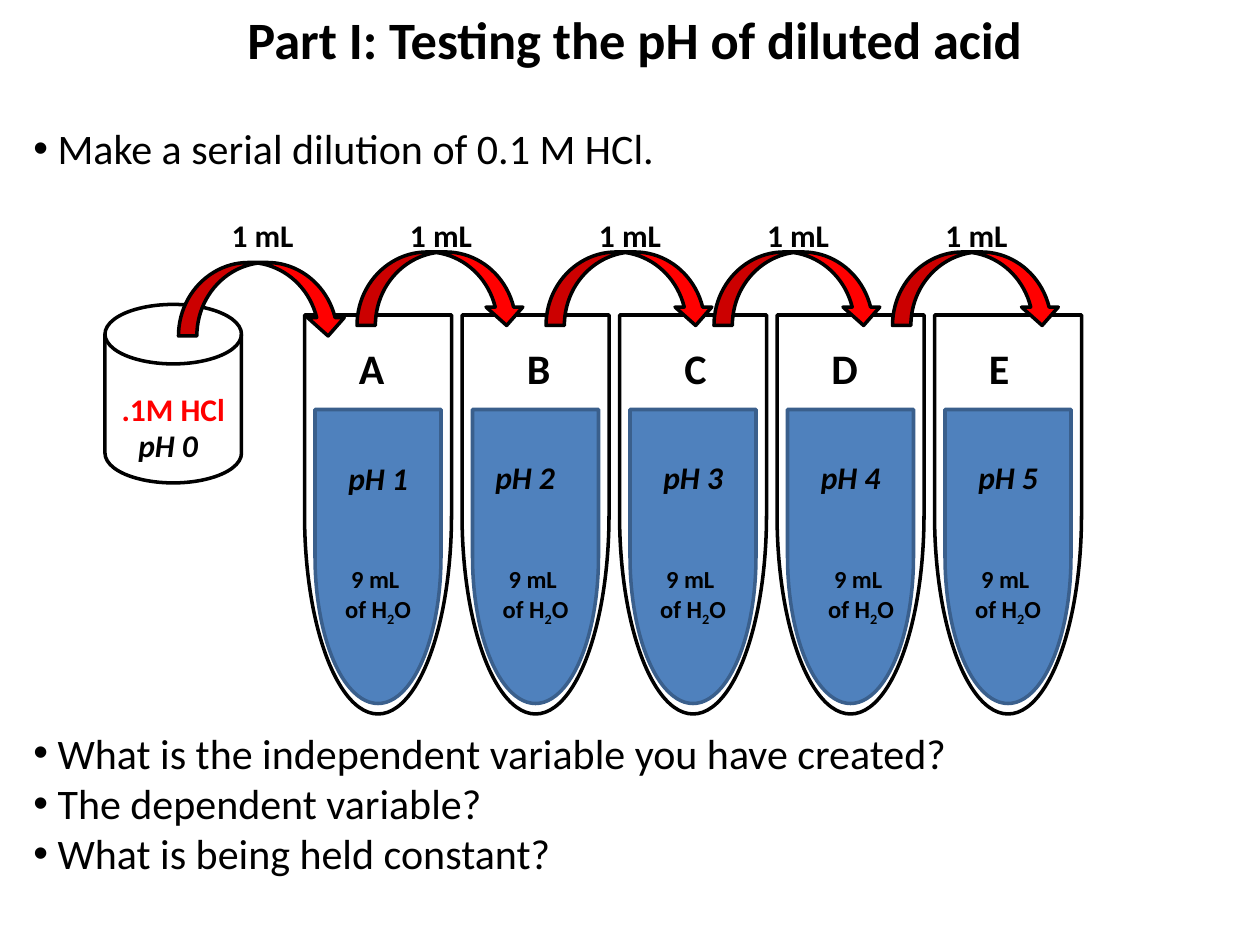
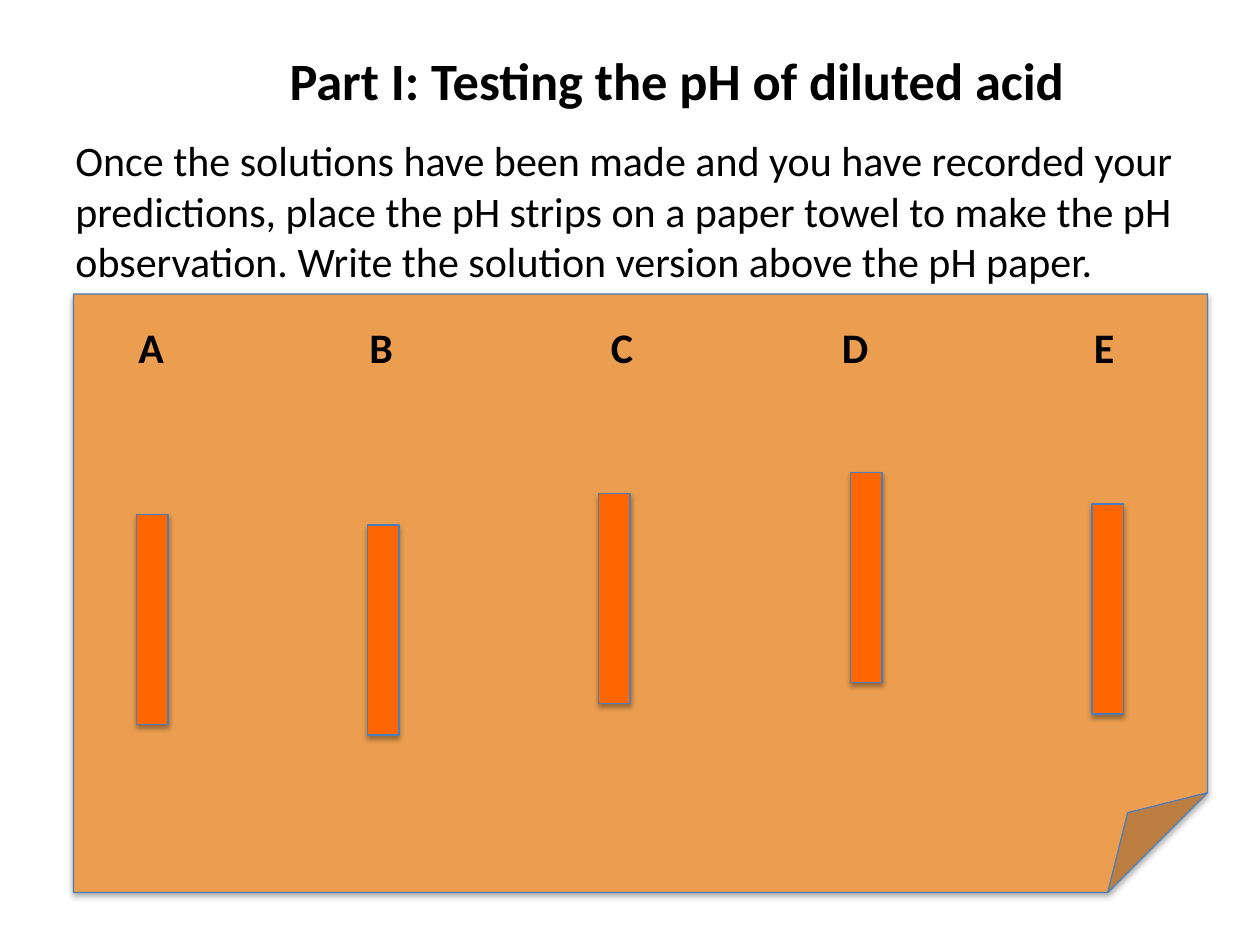
import pptx
import pptx.dml.color
import pptx.enum.shapes
import pptx.enum.text
import pptx.oxml
import pptx.oxml.ns
import pptx.util

Pt = pptx.util.Pt
MSO = pptx.enum.shapes.MSO_SHAPE
ALIGN = pptx.enum.text.PP_ALIGN
ANCHOR = pptx.enum.text.MSO_ANCHOR
AUTO = pptx.enum.text.MSO_AUTO_SIZE

COLORS = {
    "black": "000000", "white": "FFFFFF", "red": "FF0000",
    "water": "4F81BD", "water_edge": "3A5F8C", "paper": "EB9E50",
    "strip": "FF6600", "edge": "4B7EBC",
}
FONT = "Calibri"
TITLE = "Part I: Testing the pH of diluted acid"
LETTERS = "ABCDE"
NS = pptx.oxml.ns.nsdecls("a")


def rgb(name):
    return pptx.dml.color.RGBColor.from_string(COLORS[name])


def write(p, text, size=18, color="black", bold=True, italic=False,
          align=ALIGN.LEFT, baseline=0):
    p.alignment = align
    r = p.add_run()
    r.text = text
    r.font.name = FONT
    r.font.size = Pt(size)
    r.font.bold = bold
    r.font.italic = italic
    r.font.color.rgb = rgb(color)
    if baseline:
        r.font._element.set("baseline", str(baseline * 1000))


class Deck:
    def __init__(self):
        self.prs = pptx.Presentation()
        self.prs.slide_width = Pt(720)
        self.prs.slide_height = Pt(540)
        self.s = None

    def slide(self, title, x, y):
        self.s = self.prs.slides.add_slide(self.prs.slide_layouts[5])
        sp = self.s.shapes.title
        sp.left, sp.top, sp.width, sp.height = Pt(x), Pt(y), Pt(702), Pt(44)
        tf = sp.text_frame
        tf.auto_size = AUTO.NONE
        tf.vertical_anchor = ANCHOR.TOP
        write(tf.paragraphs[0], title, size=30, align=ALIGN.CENTER)

    def text(self, lines, x, y, w, h, bullet=False, **fmt):
        tf = self.s.shapes.add_textbox(Pt(x), Pt(y), Pt(w), Pt(h)).text_frame
        tf.word_wrap = True
        tf.auto_size = AUTO.SHAPE_TO_FIT_TEXT
        for i, line in enumerate(lines):
            p = tf.add_paragraph() if i else tf.paragraphs[0]
            write(p, line, **fmt)
            if bullet:
                self.bullet(p)
        return tf

    def bullet(self, p):
        pPr = p._p.get_or_add_pPr()
        pPr.set("marL", str(Pt(13.8)))
        pPr.set("indent", str(-Pt(13.8)))
        for tag in ('buFont typeface="Arial"', 'buChar char="•"'):
            pPr.append(pptx.oxml.parse_xml(f"<a:{tag} {NS}/>"))

    def shape(self, kind, x, y, w, h, fill, line, weight, rotation=0, shadow=False):
        sp = self.s.shapes.add_shape(kind, Pt(x), Pt(y), Pt(w), Pt(h))
        sp.rotation = rotation
        sp.fill.solid()
        sp.fill.fore_color.rgb = rgb(fill)
        sp.line.color.rgb = rgb(line)
        sp.line.width = Pt(weight)
        sp.shadow.inherit = False
        if shadow:
            effects = sp._element.spPr.find(pptx.oxml.ns.qn("a:effectLst"))
            effects.append(pptx.oxml.parse_xml(
                f'<a:outerShdw {NS} blurRad="{Pt(3.1)}" dist="{Pt(1.8)}" dir="5400000"'
                ' rotWithShape="0"><a:srgbClr val="000000"><a:alpha val="35000"/>'
                '</a:srgbClr></a:outerShdw>'))
        return sp

    def upright_delay(self, cx, cy, w, h, fill, line):
        self.shape(MSO.FLOWCHART_DELAY, cx - h / 2, cy - w / 2, h, w, fill, line, 2,
                   rotation=90)


def dilution_slide(deck):
    deck.slide(TITLE, 12, 0.5)
    body = dict(size=24, bold=False, bullet=True)
    deck.text(["Make a serial dilution of 0.1 M HCl."], 12, 66.5, 702, 36, **body)
    deck.text(["What is the independent variable you have created?",
               "The dependent variable?",
               "What is being held constant?"], 12, 412, 702, 95, **body)

    for i in range(len(LETTERS)):
        cx = 216 + 90 * i
        deck.upright_delay(cx, 294, 84, 228, "white", "black")
        deck.upright_delay(cx, 318, 72, 168, "water", "water_edge")

    for x in (186, 276, 366, 462, 546):
        water = dict(size=14, align=ALIGN.CENTER)
        tf = deck.text(["9 mL ", "of H"], x, 319, 60, 41, **water)
        write(tf.paragraphs[1], "2", baseline=-25, **water)
        write(tf.paragraphs[1], "O", **water)

    beaker = deck.shape(MSO.FLOWCHART_MAGNETIC_DISK, 60, 174, 78, 102,
                        "white", "black", 2)
    beaker.text_frame.vertical_anchor = ANCHOR.MIDDLE
    write(beaker.text_frame.paragraphs[0], ".1M HCl", color="red", align=ALIGN.CENTER)

    arrows = ((102, 150), (204, 144), (312, 144), (408, 144), (510, 144))
    for x, y in arrows:
        deck.shape(MSO.CURVED_DOWN_ARROW, x, y, 96, 42, "red", "black", 2)
    for x, _ in arrows:
        deck.text(["1 mL"], x + 6, 120, 84, 29, align=ALIGN.CENTER)

    ph_spots = ((72, 240), (192, 259), (276, 258), (372, 258), (462, 258), (552, 258))
    for ph, (x, y) in enumerate(ph_spots):
        deck.text([f"pH {ph}"], x, y, 72, 29, italic=True)
    for letter, x in zip(LETTERS, (198, 294, 384, 468, 558)):
        deck.text([letter], x, 192, 48, 36, size=24)


def strips_slide(deck):
    deck.slide(TITLE, 36, 24)
    deck.text(["Once the solutions have been made and you have recorded your "
               "predictions, place the pH strips on a paper towel to make the pH "
               "observation. Write the solution version above the pH paper."],
              36, 73.5, 702, 95, size=24, bold=False)
    edge = dict(line="edge", weight=0.75, shadow=True)
    deck.shape(MSO.FOLDED_CORNER, 42, 168, 648, 342, "paper", **edge)
    for letter, x in zip(LETTERS, (72, 204, 342, 474, 618)):
        deck.text([letter], x, 180, 48, 36, size=24)
    for x, y in ((78, 294), (210, 300), (342, 282), (486, 270), (624, 288)):
        deck.shape(MSO.RECTANGLE, x, y, 18, 120, "strip", **edge)


def main():
    deck = Deck()
    dilution_slide(deck)
    strips_slide(deck)
    deck.prs.save("out.pptx")


if __name__ == "__main__":
    main()
